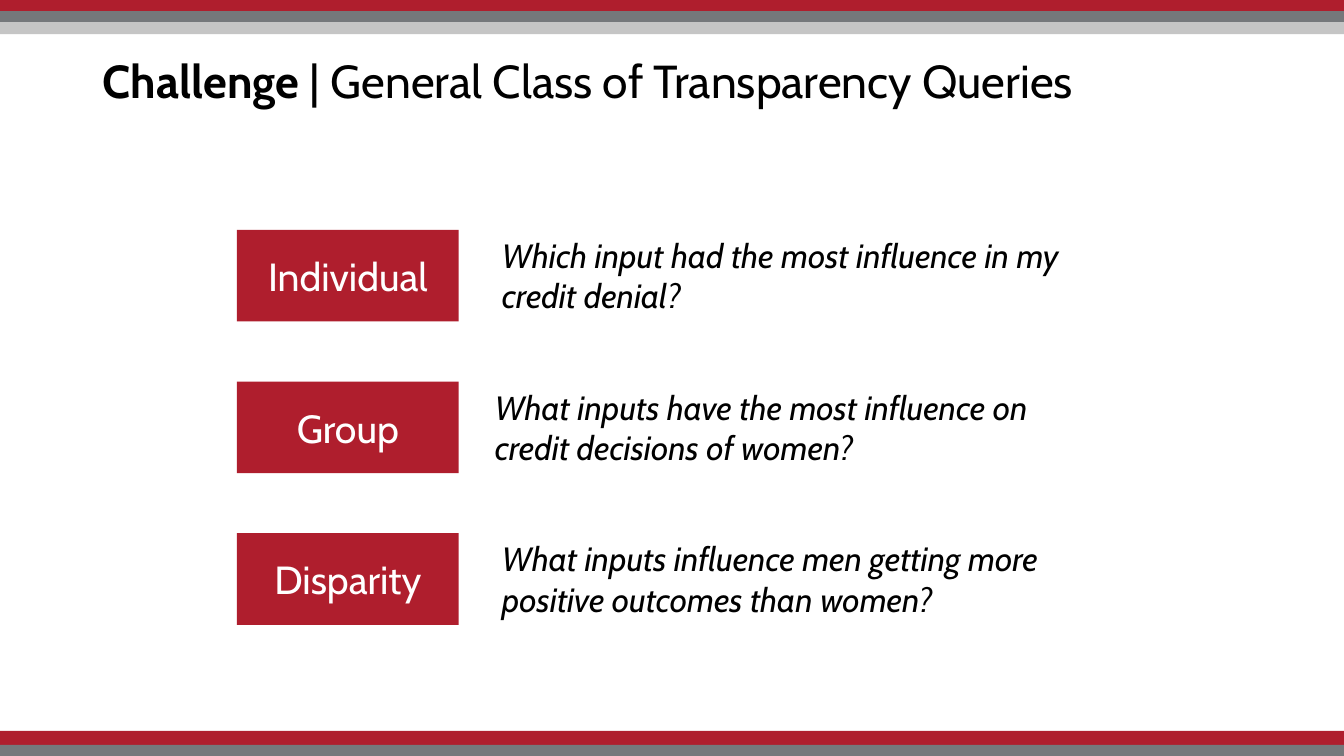
from pptx import Presentation
from pptx.dml.color import RGBColor
from pptx.enum.shapes import MSO_SHAPE
from pptx.enum.text import MSO_ANCHOR, MSO_AUTO_SIZE, PP_ALIGN
from pptx.util import Inches, Pt

RED = RGBColor(0xAF, 0x1E, 0x2D)
DARK_GRAY = RGBColor(0x75, 0x78, 0x7B)
LIGHT_GRAY = RGBColor(0xC5, 0xC5, 0xC5)
BLACK = RGBColor(0, 0, 0)
WHITE = RGBColor(0xFF, 0xFF, 0xFF)
RECTANGLE = MSO_SHAPE.RECTANGLE
MIDDLE = MSO_ANCHOR.MIDDLE
NO_FIT = MSO_AUTO_SIZE.NONE
LEFT, CENTER = PP_ALIGN.LEFT, PP_ALIGN.CENTER

SLIDE_WIDTH, SLIDE_HEIGHT = 13.33, 7.5
TITLE_ONLY = 5
ROW_TOP, ROW_STEP, ROW_HEIGHT = 2.28, 1.505, 0.91

BANDS = [
    (0, 0.11, RED),
    (0.11, 0.11, DARK_GRAY),
    (0.22, 0.12, LIGHT_GRAY),
    (7.25, 0.15, RED),
    (7.39, 0.11, DARK_GRAY),
]
QUERIES = [
    ("Individual", "Which input had the most influence in my credit denial?", 4.88),
    ("Group", "What inputs have the most influence on credit decisions of women?", 4.81),
    ("Disparity", "What inputs influence men getting more positive outcomes than women?", 4.88),
]


class QuerySlide:
    font_name = "Cabin"

    def __init__(self, slide):
        self.slide = slide

    def style(self, run, size, color, bold=False, italic=False):
        font = run.font
        font.name = self.font_name
        font.size = Pt(size)
        font.color.rgb = color
        font.bold = bold
        font.italic = italic

    def title(self, topic, subject):
        heading = self.slide.shapes.title
        heading.left, heading.top = Inches(0.92), Inches(0.1)
        heading.width, heading.height = Inches(11.5), Inches(1.45)
        frame = heading.text_frame
        frame.auto_size = NO_FIT
        frame.vertical_anchor = MIDDLE
        line = frame.paragraphs[0]
        line.alignment = LEFT
        line.line_spacing = 0.9
        for words, bold in ((topic, True), (subject, False)):
            run = line.add_run()
            run.text = words
            self.style(run, 33, BLACK, bold=bold)

    def block(self, left, top, width, height, color):
        rectangle = self.slide.shapes.add_shape(
            RECTANGLE, Inches(left), Inches(top), Inches(width), Inches(height))
        rectangle.shadow.inherit = False
        rectangle.fill.solid()
        rectangle.fill.fore_color.rgb = color
        rectangle.line.fill.background()
        return rectangle

    def category(self, name, top):
        frame = self.block(2.35, top, 2.2, ROW_HEIGHT, RED).text_frame
        frame.text = name
        frame.vertical_anchor = MIDDLE
        frame.paragraphs[0].alignment = CENTER
        self.style(frame.paragraphs[0].runs[0], 28, WHITE)

    def question(self, words, left, top):
        frame = self.slide.shapes.add_textbox(
            Inches(left), Inches(top), Inches(6.09), Inches(ROW_HEIGHT)).text_frame
        frame.word_wrap = True
        frame.text = words
        self.style(frame.paragraphs[0].runs[0], 24, BLACK, italic=True)


def main():
    presentation = Presentation()
    presentation.slide_width = Inches(SLIDE_WIDTH)
    presentation.slide_height = Inches(SLIDE_HEIGHT)
    layout = presentation.slide_layouts[TITLE_ONLY]
    page = QuerySlide(presentation.slides.add_slide(layout))

    for top, height, color in BANDS:
        page.block(0, top, SLIDE_WIDTH, height, color)
    page.title("Challenge", " | General Class of Transparency Queries")
    for row, (name, words, left) in enumerate(QUERIES):
        top = ROW_TOP + row * ROW_STEP
        page.category(name, top)
        page.question(words, left, top)

    presentation.save("out.pptx")


if __name__ == "__main__":
    main()
